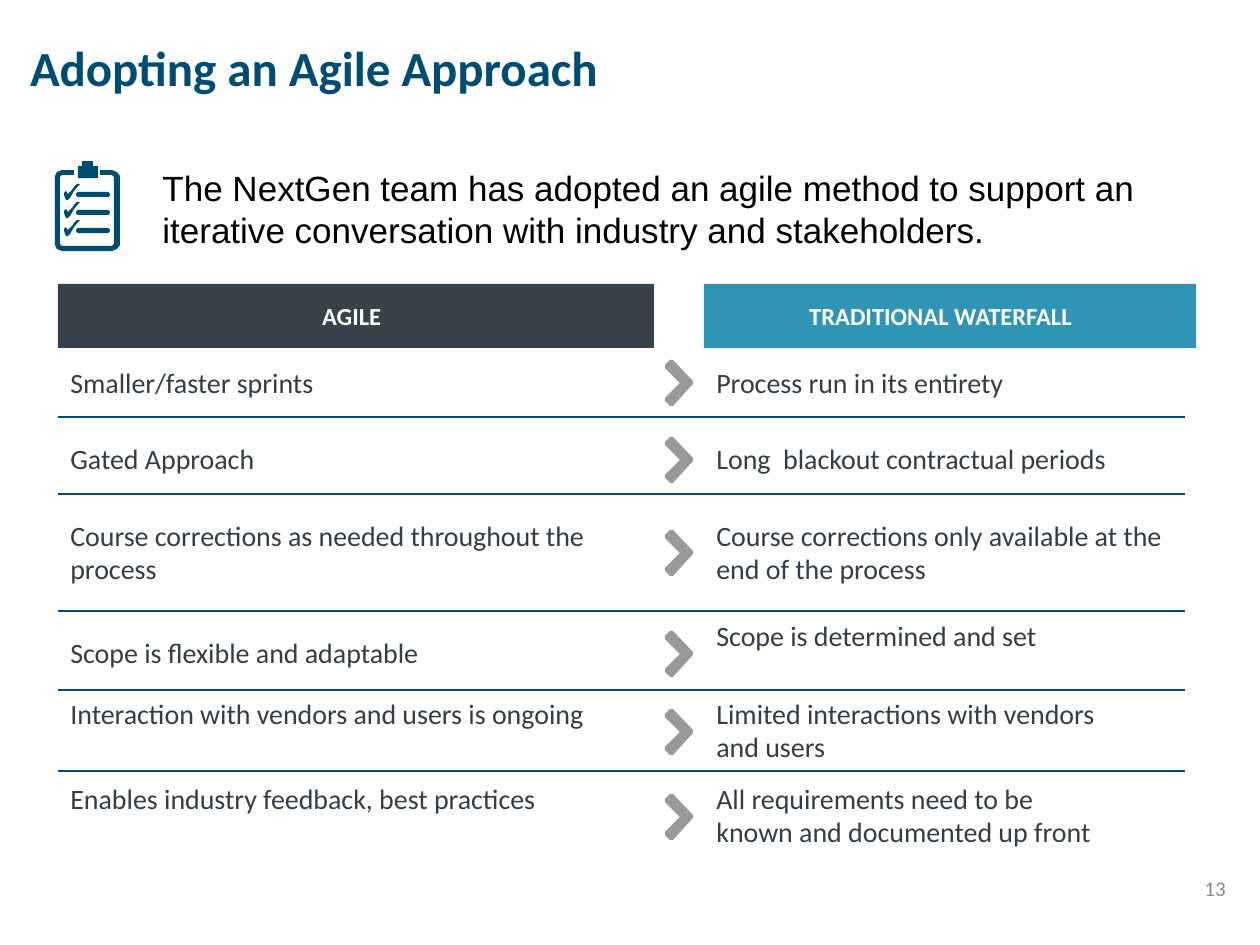
import pptx
import pptx.util
import pptx.dml.color
import pptx.enum.shapes
import pptx.enum.text
import lxml.etree

PX = 914400 / 126
COLORS = {
    "navy": "004D71", "slate": "37424A", "blue": "3095B4", "body": "333E48",
    "gray": "999999", "number": "8C8C8C", "white": "FFFFFF", "black": "000000",
}
COLORS = {name: pptx.dml.color.RGBColor.from_string(c) for name, c in COLORS.items()}
SHAPE = pptx.enum.shapes.MSO_SHAPE
ALIGN = pptx.enum.text.PP_ALIGN
ANCHOR = pptx.enum.text.MSO_ANCHOR


def write(sp, text, size, color, font="Calibri", bold=False, align=ALIGN.LEFT):
    """Fill a shape with one wrapped paragraph and return its text frame."""
    tf = sp.text_frame
    tf.word_wrap = True
    p = tf.paragraphs[0]
    p.text = text
    p.alignment = align
    p.font.name = font
    p.font.size = pptx.util.Pt(size)
    p.font.bold = bold
    p.font.color.rgb = COLORS[color]
    return tf


def add_outline(shapes, points, color, left=0, top=0):
    """Draw a closed polygon; points are px relative to left, top."""
    (x, y), *rest = [(left + px, top + py) for px, py in points]
    builder = shapes.build_freeform(x, y, scale=PX)
    builder.add_line_segments(rest, close=True)
    sp = builder.convert_to_shape()
    sp.shadow.inherit = False
    sp.fill.solid()
    sp.fill.fore_color.rgb = COLORS[color]
    sp.line.fill.background()


prs = pptx.Presentation()
prs.slide_width = pptx.util.Inches(10)
prs.slide_height = pptx.util.Inches(7.5)
s = prs.slides.add_slide(prs.slide_layouts[6])

# Title, introduction and page number
title = s.shapes.add_textbox(*[round(v * PX) for v in (30, 37, 748, 67)])
tf = write(title, "Adopting an Agile Approach", 28, "navy", bold=True)
tf.margin_left = tf.margin_top = tf.margin_right = tf.margin_bottom = 0

intro = s.shapes.add_textbox(*[round(v * PX) for v in (150, 160, 1090, 97)])
write(intro, "The NextGen team has adopted an agile method to support an iterative "
      "conversation with industry and stakeholders.", 20, "black", font="Arial")

number = s.shapes.add_textbox(*[round(v * PX) for v in (944, 863, 294, 50)])
tf = write(number, "13", 12, "number", align=ALIGN.RIGHT)
tf.vertical_anchor = ANCHOR.MIDDLE

# Column headers
for text, left, width, color, margin_right in [
    ("AGILE", 58, 596, "slate", 21),
    ("TRADITIONAL WATERFALL", 704, 492, "blue", 31),
]:
    header = s.shapes.add_shape(
        SHAPE.RECTANGLE, *[round(v * PX) for v in (left, 284, width, 64)])
    header.shadow.inherit = False
    header.fill.solid()
    header.fill.fore_color.rgb = COLORS[color]
    header.line.fill.background()
    tf = write(header, text, 14, "white", bold=True, align=ALIGN.CENTER)
    tf.vertical_anchor = ANCHOR.MIDDLE
    tf.margin_right = round(margin_right * PX)

# Comparison rows: agile top and text, waterfall top and text, chevron top
rows = [
    (359, "Smaller/faster sprints", 359, "Process run in its entirety", 359),
    (435, "Gated Approach", 435, "Long  blackout contractual periods", 436),
    (512, "Course corrections as needed throughout the process",
     512, "Course corrections only available at the end of the process", 529),
    (629, "Scope is flexible and adaptable", 612, "Scope is determined and set", 630),
    (690, "Interaction with vendors and users is ongoing",
     690, "Limited interactions with vendors \nand users", 708),
    (775, "Enables industry feedback, best practices",
     775, "All requirements need to be \nknown and documented up front", 793),
]
chevron = [(9, 47), (6, 47), (1, 42), (1, 39), (16, 24), (1, 9), (1, 6),
           (6, 1), (9, 1), (29, 22), (29, 25)]
for agile_top, agile, waterfall_top, waterfall, chevron_top in rows:
    for left, top, width, text in [(58, agile_top, 595, agile),
                                   (704, waterfall_top, 491, waterfall)]:
        height = 81 if len(text) > 45 or "\n" in text else 47
        cell = s.shapes.add_textbox(*[round(v * PX) for v in (left, top, width, height)])
        write(cell, text, 16, "body")
    add_outline(s.shapes, chevron, "gray", 664, chevron_top)

# Row dividers
for y in (417, 494, 611, 690, 771):
    divider = s.shapes.add_connector(
        pptx.enum.shapes.MSO_CONNECTOR.STRAIGHT,
        *[round(v * PX) for v in (58, y, 1185, y)])
    divider.line.color.rgb = COLORS["navy"]
    divider.line.width = pptx.util.Pt(0.75)
    lxml.etree.SubElement(divider._element.spPr, pptx.oxml.ns.qn("a:effectLst"))

# Clipboard icon
icon = s.shapes.add_group_shape().shapes
board = [(45, 0), (57, 0), (62, 2), (65, 6), (65, 75), (62, 79), (57, 81),
         (7, 81), (2, 79), (0, 75), (0, 6), (2, 2), (7, 0), (19, 0),
         (19, 5), (7, 5), (5, 7), (5, 74), (7, 76), (57, 76), (59, 74),
         (59, 7), (57, 5), (45, 5)]
clip = [(0, 5), (4, 5), (4, 0), (15, 0), (15, 5), (20, 5), (20, 17), (0, 17)]
check = [(16, 0), (10, 7), (6, 14), (4, 16), (2, 16), (0, 11), (0, 9),
         (2, 7), (4, 10), (8, 6), (10, 3), (13, 0)]
add_outline(icon, board, "navy", 55, 170)
add_outline(icon, clip, "navy", 78, 161)
for top in (184, 202, 220):
    add_outline(icon, check, "navy", 64, top)
    bar = icon.add_shape(
        SHAPE.ROUNDED_RECTANGLE, *[round(v * PX) for v in (76, top + 8, 34, 5)])
    bar.adjustments[0] = 0.5
    bar.shadow.inherit = False
    bar.fill.solid()
    bar.fill.fore_color.rgb = COLORS["navy"]
    bar.line.fill.background()

prs.save("out.pptx")
